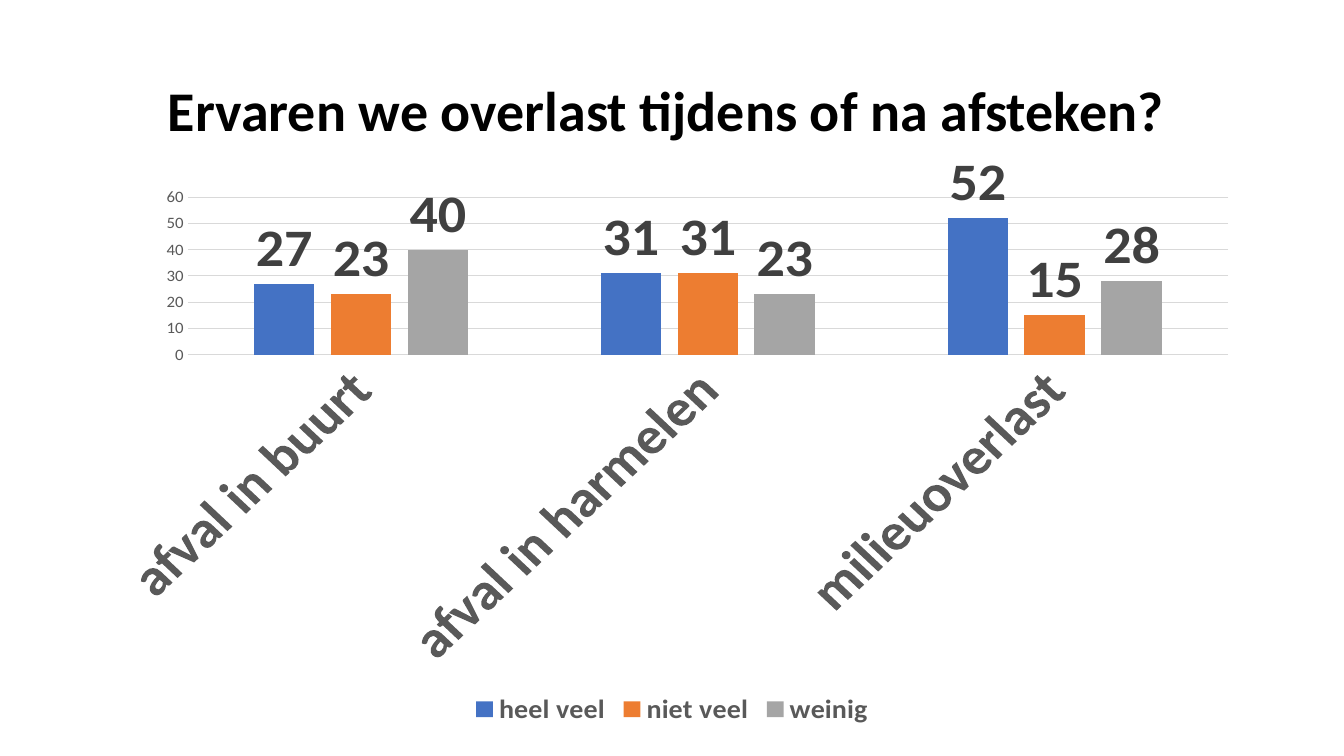
from pptx import Presentation
from pptx.chart.data import CategoryChartData
from pptx.dml.color import RGBColor
from pptx.enum.chart import XL_CHART_TYPE as ChartType, XL_LABEL_POSITION as LabelPosition
from pptx.enum.chart import XL_LEGEND_POSITION as LegendPosition, XL_TICK_MARK as TickMark
from pptx.enum.text import MSO_ANCHOR as Anchor, PP_ALIGN as Align
from pptx.util import Inches, Pt

COLORS = {
    "title": "000000",
    "axis": "595959",
    "label": "404040",
    "grid": "D9D9D9",
    "heel veel": "4472C4",
    "niet veel": "ED7D31",
    "weinig": "A5A5A5",
}
CATEGORIES = ["afval in buurt", "afval in harmelen", "milieuoverlast"]
ANSWERS = {
    "heel veel": [27, 31, 52],
    "niet veel": [23, 31, 15],
    "weinig": [40, 23, 28],
}
WIDTH, HEIGHT = Inches(13.33), Inches(7.5)
MARGIN = Inches(0.92)
CONTENT_WIDTH = WIDTH - 2 * MARGIN


def color(name):
    return RGBColor.from_string(COLORS[name])


def format_font(font, size, color_name, bold=False):
    font.name = "Calibri"
    font.size = Pt(size)
    font.bold = bold
    font.color.rgb = color(color_name)


def format_line(line, color_name):
    line.color.rgb = color(color_name)
    line.width = Pt(0.75)


def write_text(shape, text, size, color_name, bold=False, align=Align.CENTER):
    frame = shape.text_frame
    frame.word_wrap = True
    frame.vertical_anchor = Anchor.MIDDLE
    paragraph = frame.paragraphs[0]
    paragraph.alignment = align
    paragraph.line_spacing = 0.9
    run = paragraph.add_run()
    run.text = text
    format_font(run.font, size, color_name, bold)


def place_title(slide, left, top, width, height):
    title = slide.shapes.title
    title.left, title.top, title.width, title.height = left, top, width, height
    write_text(title, "Ervaren we overlast tijdens of na afsteken? ", 40, "title", bold=True)


def format_axes(chart):
    category_axis, value_axis = chart.category_axis, chart.value_axis
    for axis in (category_axis, value_axis):
        axis.major_tick_mark = axis.minor_tick_mark = TickMark.NONE
    format_font(category_axis.tick_labels.font, 40, "axis", bold=True)
    format_line(category_axis.format.line, "grid")
    text_properties = category_axis._element.get_or_add_txPr()
    text_properties.bodyPr.set("rot", "-2700000")
    text_properties.bodyPr.set("vert", "horz")
    format_font(value_axis.tick_labels.font, 12, "axis")
    value_axis.format.line.fill.background()
    value_axis.has_major_gridlines = True
    format_line(value_axis.major_gridlines.format.line, "grid")


def format_series(series):
    series.format.fill.solid()
    series.format.fill.fore_color.rgb = color(series.name)
    series.invert_if_negative = False
    labels = series.data_labels
    labels.show_value = True
    labels.position = LabelPosition.OUTSIDE_END
    format_font(labels.font, 40, "label", bold=True)


def place_chart(slide, left, top, width, height):
    data = CategoryChartData()
    data.categories = CATEGORIES
    for answer, values in ANSWERS.items():
        data.add_series(answer, values)
    frame = slide.shapes.add_chart(ChartType.COLUMN_CLUSTERED, left, top, width, height, data)
    chart = frame.chart
    format_font(chart.font, 10, "title")
    chart.has_title = False
    chart.has_legend = True
    chart.legend.position = LegendPosition.BOTTOM
    chart.legend.include_in_layout = False
    format_font(chart.legend.font, 20, "axis", bold=True)
    format_axes(chart)
    plot = chart.plots[0]
    plot.gap_width = 219
    plot.overlap = -27
    plot.vary_by_categories = False
    for series in plot.series:
        format_series(series)


def main():
    presentation = Presentation()
    presentation.slide_width, presentation.slide_height = WIDTH, HEIGHT
    slide = presentation.slides.add_slide(presentation.slide_layouts.get_by_name("Title Only"))
    place_title(slide, MARGIN, Inches(0.4), CONTENT_WIDTH, Inches(1.45))
    place_chart(slide, MARGIN, Inches(1.5), CONTENT_WIDTH, Inches(5.75))
    presentation.save("out.pptx")


if __name__ == "__main__":
    main()
